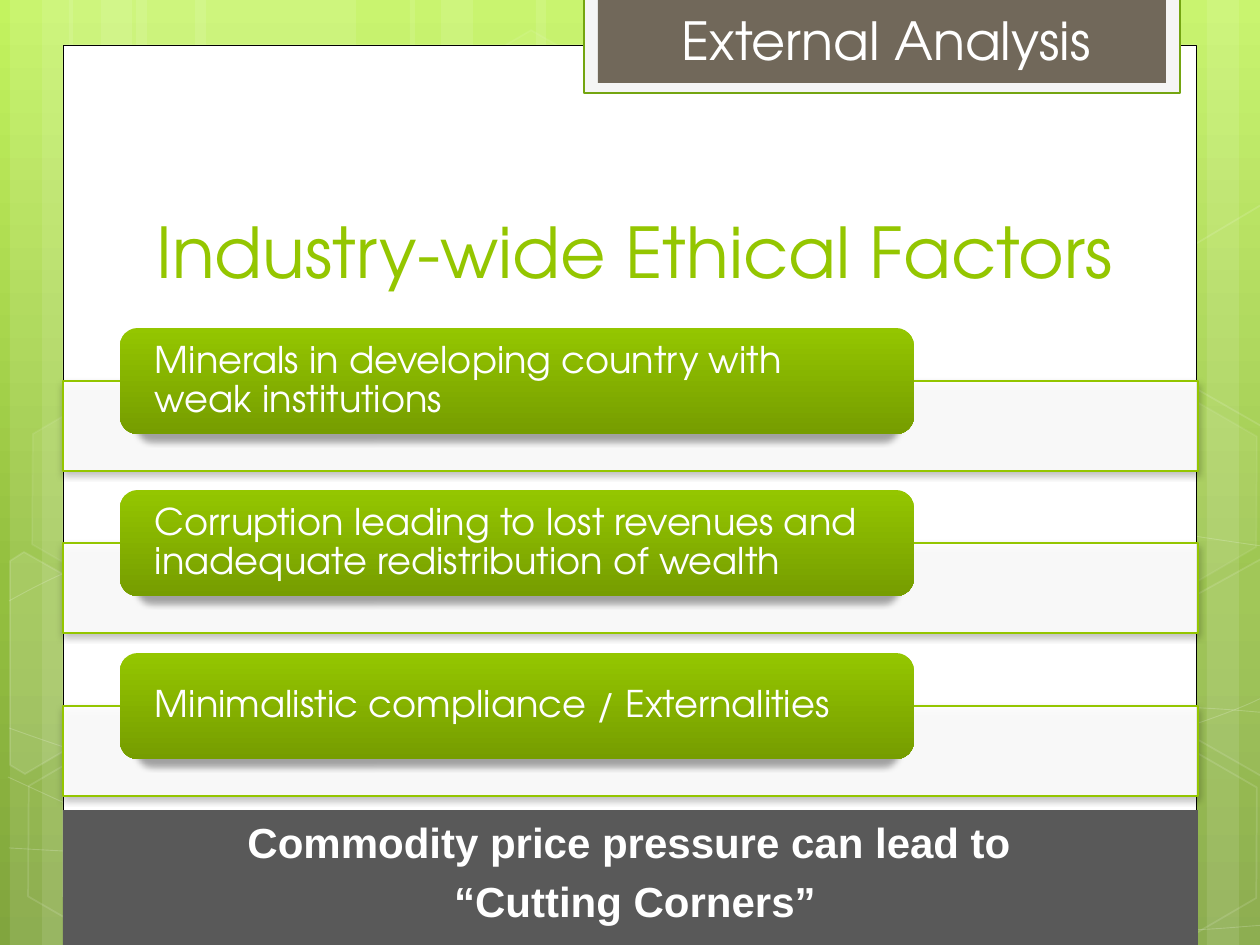
from dataclasses import dataclass
from typing import NamedTuple, Optional

from lxml.etree import SubElement
from pptx import Presentation
from pptx.dml.color import RGBColor
from pptx.enum.shapes import MSO_SHAPE as Preset
from pptx.enum.text import MSO_ANCHOR as Anchor, PP_ALIGN as Align
from pptx.oxml.ns import qn
from pptx.util import Pt

PX = 914400 / 126
WIDTH, HEIGHT = 1260, 945


@dataclass(frozen=True)
class Theme:
    white: str = "FFFFFF"
    black: str = "000000"
    green: str = "94C600"
    green_dark: str = "769D00"
    tab_edge: str = "74A510"
    tab_back: str = "F5F5F5"
    brown: str = "71685A"
    gray: str = "595959"
    backdrop: tuple = ((0, "C3F35F"), (62, "93BF3F"), (100, "81A53E"))
    font: str = "TeX Gyre Adventor"
    footer_font: str = "Arial"
    title_size: int = 40
    tab_size: int = 30
    footer_size: int = 24
    factor_size: int = 21


class Box(NamedTuple):
    left: int
    top: int
    width: int
    height: int

    def emu(self) -> list:
        return [round(value * PX) for value in self]


class Paint(NamedTuple):
    color: str
    opacity: int = 100
    width: float = 1


class Shadow(NamedTuple):
    opacity: int
    blur: float
    distance: float
    scale: int = 100


class Hexagon(NamedTuple):
    left: int
    top: int
    fill: int
    line: int


class Polygon(NamedTuple):
    points: list
    fill: int


THEME = Theme()
STRIPES = [(136, 220), (10, 63), (42, 105), (195, 220), (69, 63), (101, 105),
           (924, 220), (1207, 63), (1134, 105), (536, 388), (410, 63), (441, 105)]
CURVES = [
    [(9, 848), (77, 852), (145, 856), (239, 854), (334, 853), (451, 850), (577, 838),
     (703, 825), (882, 801), (998, 777), (1113, 753), (1231, 716), (1269, 694)],
    [(9, 601), (45, 581), (82, 562), (152, 543), (224, 524), (326, 496), (437, 488),
     (549, 479), (685, 478), (824, 488), (963, 498), (1193, 537), (1269, 547)],
    [(8, 777), (160, 847), (311, 916), (421, 944)],
    [(9, 728), (48, 742), (88, 756), (161, 776), (234, 795), (344, 827), (450, 848),
     (554, 869), (687, 892), (791, 905), (896, 919), (1008, 924), (1075, 927),
     (1140, 932), (1158, 930), (1191, 930), (1223, 929), (1246, 926), (1269, 925)],
    [(305, 944), (328, 918), (350, 893), (381, 871), (411, 848), (454, 823), (489, 805),
     (524, 788), (546, 780), (592, 767), (638, 755), (722, 737), (766, 728),
     (811, 719), (818, 719), (857, 717), (896, 714), (958, 709), (1000, 708),
     (1045, 707), (1116, 708), (1116, 708), (1116, 708), (1201, 708), (1201, 708),
     (1223, 709), (1245, 711), (1256, 712), (1268, 713), (1264, 712), (1268, 713)],
]
HEXAGONS = [Hexagon(421, 45, 4, 8), Hexagon(626, 742, 6, 12), Hexagon(14, 745, 0, 12),
            Hexagon(18, 393, 7, 8), Hexagon(219, 746, 0, 12), Hexagon(949, 571, 10, 12),
            Hexagon(1051, 747, 0, 12), Hexagon(1051, 396, 7, 8)]
POLYGONS = [
    Polygon([(10, 561), (24, 552), (121, 607), (120, 718), (25, 774), (10, 765)], 10),
    Polygon([(1167, 611), (1261, 559), (1271, 562), (1271, 772), (1263, 777), (1167, 722)], 4),
    Polygon([(1167, 261), (1261, 205), (1273, 212), (1271, 422), (1263, 427), (1167, 372)], 0),
]
FACTORS = [
    "Minerals in developing country with weak institutions",
    "Corruption leading to lost revenues and inadequate redistribution of wealth",
    "Minimalistic compliance / Externalities",
]


def apply_color(fill, paint: Paint) -> None:
    fill.solid()
    fill.fore_color.rgb = RGBColor.from_string(paint.color)
    if paint.opacity < 100:
        color = fill._xPr.find(qn("a:solidFill"))[0]
        SubElement(color, qn("a:alpha"), val=str(paint.opacity * 1000))


def apply_gradient(fill, stops: tuple) -> None:
    fill.gradient()
    fill.gradient_angle = 270
    stop_list = fill._xPr.find(qn("a:gradFill")).find(qn("a:gsLst"))
    for stop in list(stop_list):
        stop_list.remove(stop)
    for position, color in stops:
        stop = SubElement(stop_list, qn("a:gs"), pos=str(position * 1000))
        SubElement(stop, qn("a:srgbClr"), val=color)


def style(shape, fill: Optional[Paint] = None, line: Optional[Paint] = None,
          shadow: Optional[Shadow] = None, gradient: tuple = ()) -> None:
    shape.shadow.inherit = False
    if gradient:
        apply_gradient(shape.fill, gradient)
    elif fill and fill.opacity:
        apply_color(shape.fill, fill)
    else:
        shape.fill.background()
    if line:
        apply_color(shape.line.fill, line)
        shape.line.width = Pt(line.width)
    else:
        shape.line.fill.background()
    if shadow:
        effects = shape._element.spPr.find(qn("a:effectLst"))
        outer = SubElement(effects, qn("a:outerShdw"), blurRad=str(Pt(shadow.blur)),
                           dist=str(Pt(shadow.distance)), dir="5400000",
                           sx=str(shadow.scale * 1000), rotWithShape="0")
        color = SubElement(outer, qn("a:srgbClr"), val=THEME.black)
        SubElement(color, qn("a:alpha"), val=str(shadow.opacity * 1000))


def add_box(slide, box: Box, preset=Preset.RECTANGLE, **look):
    shape = slide.shapes.add_shape(preset, *box.emu())
    style(shape, **look)
    return shape


def add_outline(slide, points: list, close: bool, **look):
    builder = slide.shapes.build_freeform(*points[0], scale=PX)
    builder.add_line_segments(points[1:], close=close)
    shape = builder.convert_to_shape()
    style(shape, **look)
    return shape


def add_curve(slide, points: list, **look) -> None:
    shape = add_outline(slide, points, False, **look)
    segments = list(shape._element.iter(qn("a:lnTo")))
    outline = segments[0].getparent()
    for first in range(0, len(segments), 3):
        bezier = SubElement(outline, qn("a:cubicBezTo"))
        for segment in segments[first:first + 3]:
            bezier.append(segment[0])
            outline.remove(segment)


def write_text(shape, text: str, *, size: int, font: str = THEME.font,
               color: str = THEME.white, bold: bool = False, align=Align.LEFT,
               anchor=Anchor.MIDDLE, indent: int = 0, inset: Optional[int] = None,
               line_spacing: Optional[float] = None, gap: int = 0) -> None:
    frame = shape.text_frame
    frame.word_wrap = True
    frame.vertical_anchor = anchor
    if inset is not None:
        frame.margin_left = frame.margin_right = round(inset * PX)
        frame.margin_top = frame.margin_bottom = 0
    frame.text = text
    for index, paragraph in enumerate(frame.paragraphs):
        paragraph.alignment = align
        paragraph.line_spacing = line_spacing
        if index and gap:
            paragraph.space_before = Pt(gap)
        if indent:
            properties = paragraph._p.get_or_add_pPr()
            properties.set("marL", str(round(indent * PX)))
            properties.set("indent", "0")
        for run in paragraph.runs:
            run.font.name = font
            run.font.size = Pt(size)
            run.font.bold = bold
            run.font.color.rgb = RGBColor.from_string(color)


def add_text(slide, box: Box, text: str, **text_format) -> None:
    write_text(slide.shapes.add_textbox(*box.emu()), text, **text_format)


def draw_backdrop(slide) -> None:
    apply_gradient(slide.background.fill, THEME.backdrop)
    for left, width in STRIPES:
        add_box(slide, Box(left, 0, width, HEIGHT), fill=Paint(THEME.white, 10))
    for curve in CURVES:
        add_curve(slide, curve, line=Paint(THEME.white, 20, 0.5))
    for item in HEXAGONS:
        hexagon = add_box(slide, Box(item.left, item.top, 220, 192), Preset.HEXAGON,
                          fill=Paint(THEME.white, item.fill), line=Paint(THEME.white, item.line))
        hexagon.adjustments[0] = 0.285
        hexagon.rotation = 30
    for polygon in POLYGONS:
        add_outline(slide, polygon.points, True, fill=Paint(THEME.white, polygon.fill),
                    line=Paint(THEME.white, 12))


def draw_factor(slide, index: int, text: str) -> None:
    top = 328 + index * 325 // 2
    add_box(slide, Box(63, top + 53, 1135, 90), fill=Paint(THEME.white, 90),
            line=Paint(THEME.green, width=0.75), shadow=Shadow(28, 4, 2))
    add_box(slide, Box(120, top, 794, 106), Preset.ROUNDED_RECTANGLE,
            gradient=((0, THEME.green), (100, THEME.green_dark)), shadow=Shadow(34, 3.5, 4, 96))
    add_text(slide, Box(125, top + 5, 784, 96), text, size=THEME.factor_size,
             inset=30, line_spacing=0.9)


def main() -> None:
    presentation = Presentation()
    presentation.slide_width, presentation.slide_height = round(WIDTH * PX), round(HEIGHT * PX)
    slide = presentation.slides.add_slide(presentation.slide_layouts[6])
    draw_backdrop(slide)
    add_box(slide, Box(63, 45, 1134, 852), fill=Paint(THEME.white), line=Paint(THEME.black, width=0.5))
    add_box(slide, Box(584, -3, 596, 96), fill=Paint(THEME.tab_back),
            line=Paint(THEME.tab_edge, width=1.25))
    add_box(slide, Box(598, -3, 568, 86), fill=Paint(THEME.brown))
    add_text(slide, Box(144, 141, 994, 158), "Industry-wide Ethical Factors",
             size=THEME.title_size, color=THEME.green, anchor=Anchor.BOTTOM)
    add_text(slide, Box(598, -2, 568, 83), "External Analysis", size=THEME.tab_size,
             align=Align.CENTER, indent=9)
    for index, text in enumerate(FACTORS):
        draw_factor(slide, index, text)
    footer = add_box(slide, Box(63, 810, 1135, 135), fill=Paint(THEME.gray))
    write_text(footer, "Commodity price pressure can lead to \n“Cutting Corners”",
               size=THEME.footer_size, font=THEME.footer_font, bold=True, align=Align.CENTER,
               anchor=Anchor.TOP, indent=9, gap=5)
    presentation.save("out.pptx")


if __name__ == "__main__":
    main()
